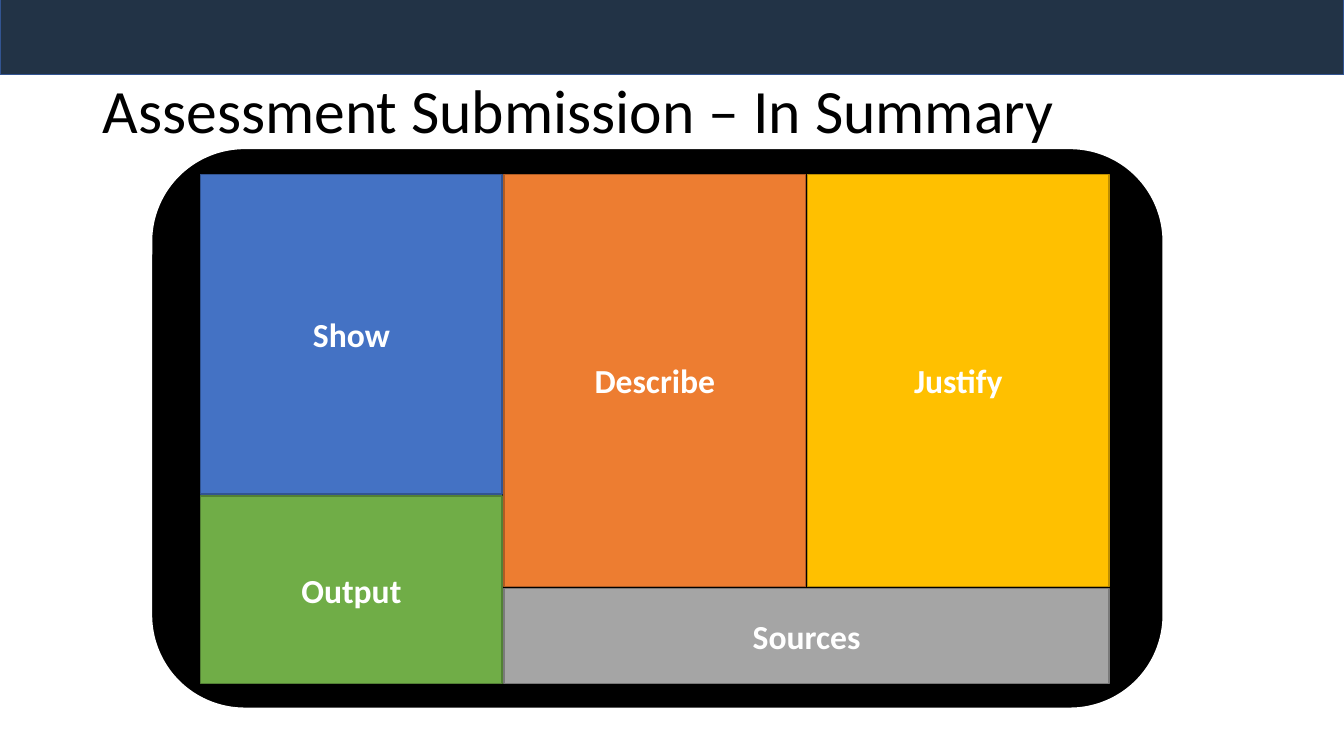
from dataclasses import dataclass

from pptx import Presentation
from pptx.dml.color import RGBColor
from pptx.enum.shapes import MSO_SHAPE
from pptx.enum.text import MSO_ANCHOR, PP_ALIGN
from pptx.util import Pt

EMU_PER_PX = 9144
GRID_LEFT = 199
COLUMN_PITCH = 301
GUTTER = 2


@dataclass(frozen=True)
class Theme:
    font: str = "Calibri"
    title_size: int = 44
    label_size: int = 24
    line_width: float = 1
    panel_line_width: float = 1.5
    black: str = "000000"
    white: str = "FFFFFF"
    navy: tuple = ("223346", "325491")
    blue: tuple = ("4472C4", "325491")
    orange: tuple = ("ED7D31", "AF5C24")
    green: tuple = ("70AD47", "538035")
    gold: tuple = ("FFC000", "BD8E00")
    grey: tuple = ("A5A5A5", "7A7A7A")


THEME = Theme()


def px(length):
    return length * EMU_PER_PX


def add_block(slide, box, colors, kind=MSO_SHAPE.RECTANGLE, line_width=THEME.line_width):
    fill, line = colors
    block = slide.shapes.add_shape(kind, *map(px, box))
    block.shadow.inherit = False
    block.fill.solid()
    block.fill.fore_color.rgb = RGBColor.from_string(fill)
    block.line.color.rgb = RGBColor.from_string(line)
    block.line.width = Pt(line_width)
    return block


def write(frame, text, size, color, bold=False, align=PP_ALIGN.LEFT):
    frame.word_wrap = True
    frame.vertical_anchor = MSO_ANCHOR.MIDDLE
    paragraph = frame.paragraphs[0]
    paragraph.alignment = align
    run = paragraph.add_run()
    run.text = text
    run.font.name = THEME.font
    run.font.size = Pt(size)
    run.font.bold = bold
    run.font.color.rgb = RGBColor.from_string(color)
    return paragraph


def add_title(slide, text):
    title = slide.shapes.add_textbox(*map(px, (92, 40, 1150, 145)))
    paragraph = write(title.text_frame, text, THEME.title_size, THEME.black)
    paragraph.line_spacing = 0.9


def add_section(slide, label, column, span, top, height, colors):
    left = GRID_LEFT + column * COLUMN_PITCH
    width = span * COLUMN_PITCH - GUTTER
    section = add_block(slide, (left, top, width, height), colors)
    write(section.text_frame, label, THEME.label_size, THEME.white, True, PP_ALIGN.CENTER)


def main():
    deck = Presentation()
    deck.slide_width = px(1333)
    deck.slide_height = px(750)
    slide = deck.slides.add_slide(deck.slide_layouts[6])

    add_block(slide, (0, -4, 1333, 78), THEME.navy)
    add_block(slide, (150, 147, 1004, 556), (THEME.black, THEME.white),
              MSO_SHAPE.ROUNDED_RECTANGLE, THEME.panel_line_width)
    add_title(slide, "Assessment Submission – In Summary")

    sections = [
        ("Show", 0, 1, 173, 317, THEME.blue),
        ("Describe", 1, 1, 173, 409, THEME.orange),
        ("Output", 0, 1, 492, 186, THEME.green),
        ("Justify", 2, 1, 173, 409, THEME.gold),
        ("Sources", 1, 2, 584, 94, THEME.grey),
    ]
    for section in sections:
        add_section(slide, *section)

    deck.save("out.pptx")


if __name__ == "__main__":
    main()
